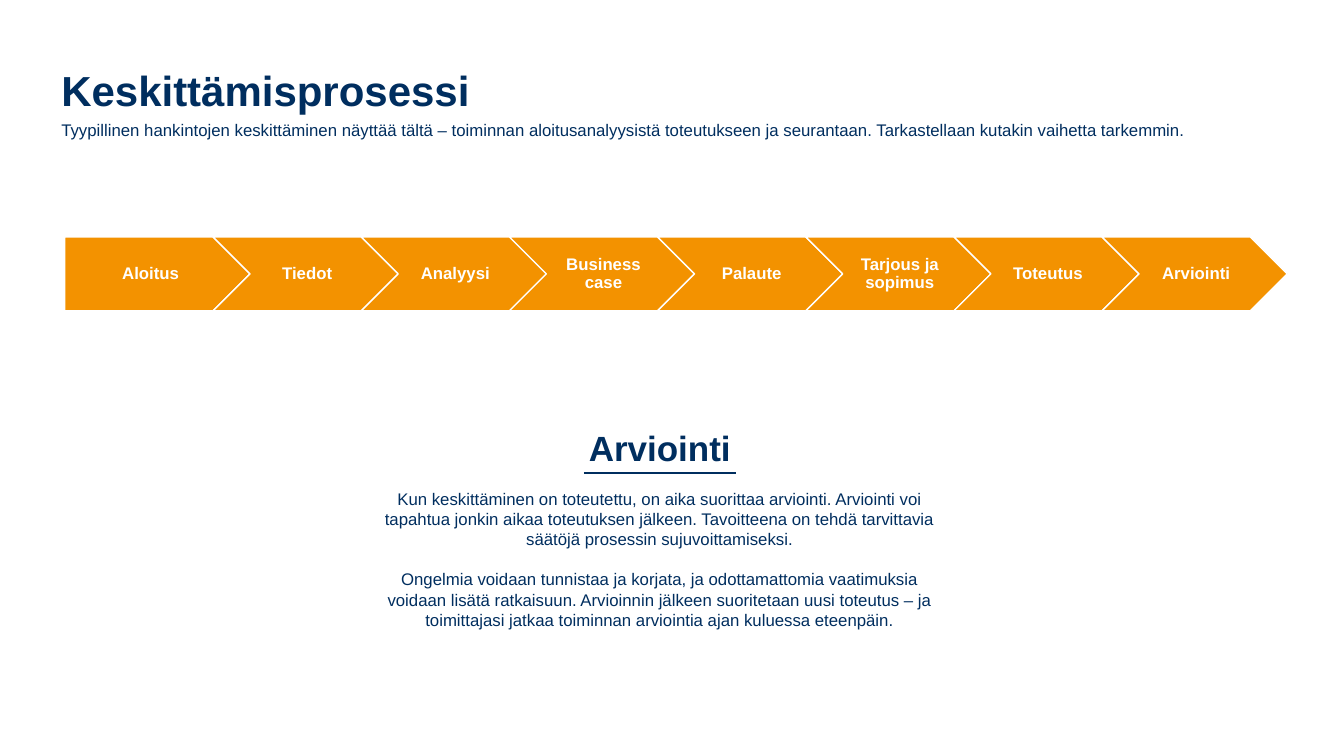
from pptx import Presentation
from pptx.dml.color import RGBColor
from pptx.enum.shapes import MSO_CONNECTOR, MSO_SHAPE
from pptx.enum.text import MSO_ANCHOR, PP_ALIGN
from pptx.oxml.ns import qn
from pptx.util import Pt
from lxml import etree

TITLE = "Keskittämisprosessi"
INTRO = ("Tyypillinen hankintojen keskittäminen näyttää tältä – toiminnan "
         "aloitusanalyysistä toteutukseen ja seurantaan. Tarkastellaan kutakin "
         "vaihetta tarkemmin.")
STEPS = ["Aloitus", "Tiedot", "Analyysi", "Business case", "Palaute",
         "Tarjous ja sopimus", "Toteutus", "Arviointi"]
DETAIL_HEADING = "Arviointi"
DETAIL_TEXTS = [
    "Kun keskittäminen on toteutettu, on aika suorittaa arviointi. Arviointi voi "
    "tapahtua jonkin aikaa toteutuksen jälkeen. Tavoitteena on tehdä tarvittavia "
    "säätöjä prosessin sujuvoittamiseksi.",
    "Ongelmia voidaan tunnistaa ja korjata, ja odottamattomia vaatimuksia voidaan "
    "lisätä ratkaisuun. Arvioinnin jälkeen suoritetaan uusi toteutus – ja "
    "toimittajasi jatkaa toiminnan arviointia ajan kuluessa eteenpäin.",
]

NAVY = RGBColor(0x00, 0x2E, 0x5F)
ORANGE = RGBColor(0xF3, 0x92, 0x00)
WHITE = RGBColor(0xFF, 0xFF, 0xFF)
LEFT, CENTER = PP_ALIGN.LEFT, PP_ALIGN.CENTER
MIDDLE = MSO_ANCHOR.MIDDLE
PENTAGON, CHEVRON = MSO_SHAPE.PENTAGON, MSO_SHAPE.CHEVRON
STRAIGHT = MSO_CONNECTOR.STRAIGHT
FONT = "Arial"
BODY_SIZE = 12

STEP_LEFT, STEP_TOP = 46.3, 169.2
STEP_WIDTH, STEP_HEIGHT, STEP_PITCH = 132.3, 52.9, 105.84
PARAGRAPH_GAP = 14.4


def style(para, size, color, bold=False, align=LEFT, before=0):
    para.alignment = align
    para.space_before = Pt(before)
    for span in para.runs:
        span.font.name = FONT
        span.font.size = Pt(size)
        span.font.bold = bold
        span.font.color.rgb = color


def add_text(page, left, top, width, height, lines, align=LEFT):
    box = page.shapes.add_textbox(Pt(left), Pt(top), Pt(width), Pt(height))
    frame = box.text_frame
    frame.word_wrap = True
    frame.text = "\n".join(text for text, size, bold, before in lines)
    for para, (text, size, bold, before) in zip(frame.paragraphs, lines):
        style(para, size, NAVY, bold, align, before)


def add_step(page, index, label):
    kind = CHEVRON if index else PENTAGON
    step = page.shapes.add_shape(kind, Pt(STEP_LEFT + index * STEP_PITCH),
                                 Pt(STEP_TOP), Pt(STEP_WIDTH), Pt(STEP_HEIGHT))
    step.shadow.inherit = False
    step.fill.solid()
    step.fill.fore_color.rgb = ORANGE
    step.line.color.rgb = WHITE
    step.line.width = Pt(1)
    frame = step.text_frame
    frame.word_wrap = True
    frame.vertical_anchor = MIDDLE
    frame.margin_left = Pt(3.6 if index else 5)
    frame.margin_right = Pt(1.4)
    frame.margin_top = frame.margin_bottom = Pt(2.9)
    frame.text = label
    para = frame.paragraphs[0]
    style(para, BODY_SIZE, WHITE, True, CENTER)
    para.line_spacing = 0.9


deck = Presentation()
deck.slide_width, deck.slide_height = Pt(960), Pt(540)
page = deck.slides.add_slide(deck.slide_layouts[6])

for index, label in enumerate(STEPS):
    add_step(page, index, label)

detail = [(DETAIL_HEADING, 25, True, 0)]
detail += [(text, BODY_SIZE, False, PARAGRAPH_GAP) for text in DETAIL_TEXTS]
add_text(page, 258.5, 301, 425.5, 154, detail, CENTER)

underline = page.shapes.add_connector(STRAIGHT, Pt(417), Pt(337.7), Pt(525.6), Pt(337.7))
underline.line.color.rgb = NAVY
underline.line.width = Pt(1.25)
etree.SubElement(underline._element.spPr, qn("a:effectLst"))

add_text(page, 36.7, 42.5, 846.7, 56, [(TITLE, 30, True, 0)])
add_text(page, 36.7, 82.1, 882.7, 21.6, [(INTRO, BODY_SIZE, False, 0)])

deck.save("out.pptx")
